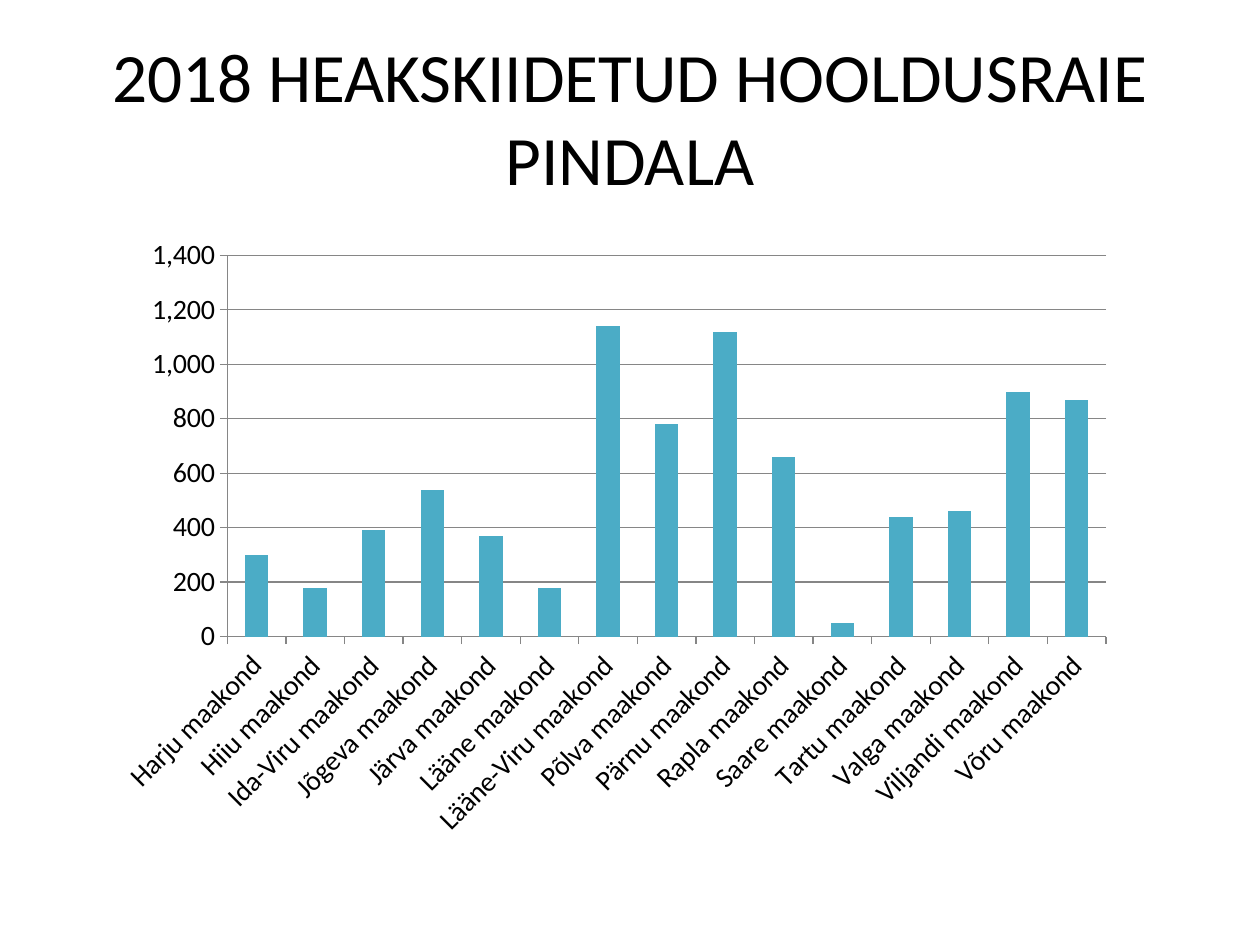
from lxml import etree
from pptx import Presentation
from pptx.chart.data import CategoryChartData
from pptx.dml.color import RGBColor
from pptx.enum.chart import XL_CHART_TYPE, XL_TICK_MARK
from pptx.enum.text import MSO_ANCHOR, PP_ALIGN
from pptx.oxml.ns import qn
from pptx.util import Cm, Pt

# Content
TITLE = "2018 HEAKSKIIDETUD HOOLDUSRAIE PINDALA"
AREA_BY_COUNTY = {
    "Harju": 300, "Hiiu": 180, "Ida-Viru": 390, "Jõgeva": 540, "Järva": 370,
    "Lääne": 180, "Lääne-Viru": 1140, "Põlva": 780, "Pärnu": 1120,
    "Rapla": 660, "Saare": 50, "Tartu": 440, "Valga": 460,
    "Viljandi": 900, "Võru": 870,
}

# Format
BLACK, GREY, TEAL = "000000", "868686", "4BACC6"
TITLE_BOX = (1.27, 0.76, 22.86, 3.18)
CHART_BOX = (2.11, 4.52, 20.6, 12.6)
PLOT_LAYOUT = {"layoutTarget": "inner", "xMode": "edge", "yMode": "edge",
               "x": 0.12, "y": 0.05, "w": 0.86, "h": 0.61}
TITLE_FONT = {"name": "Calibri", "size": Pt(39.6)}
AXIS_FONT = {"name": "Calibri", "size": Pt(16)}
VALUE_SCALE = {"minimum_scale": 0, "maximum_scale": 1400, "major_unit": 200,
               "has_major_gridlines": True}


def color(hex_value):
    return RGBColor.from_string(hex_value)


def set_attributes(target, values):
    for name, value in values.items():
        setattr(target, name, value)


def set_font(font, values):
    set_attributes(font, values)
    font.color.rgb = color(BLACK)


def set_line(line):
    line.color.rgb = color(GREY)
    line.width = Pt(0.75)


def add_title(slide):
    shape = slide.shapes.add_textbox(*map(Cm, TITLE_BOX))
    set_attributes(shape.text_frame, {"word_wrap": True,
                                      "vertical_anchor": MSO_ANCHOR.MIDDLE})
    paragraph = shape.text_frame.paragraphs[0]
    paragraph.text = TITLE
    paragraph.alignment = PP_ALIGN.CENTER
    set_font(paragraph.font, TITLE_FONT)


def set_plot_layout(chart):
    plot_area = chart.plots[0]._element.getparent()
    for old_layout in plot_area.findall(qn("c:layout")):
        plot_area.remove(old_layout)
    layout = etree.Element(qn("c:layout"))
    manual = etree.SubElement(layout, qn("c:manualLayout"))
    for name, value in PLOT_LAYOUT.items():
        etree.SubElement(manual, qn(f"c:{name}")).set("val", str(value))
    plot_area.insert(0, layout)


def add_chart(slide):
    data = CategoryChartData(number_format="#,##0")
    data.categories = [f"{county} maakond" for county in AREA_BY_COUNTY]
    data.add_series("Series 1", list(AREA_BY_COUNTY.values()))
    chart = slide.shapes.add_chart(
        XL_CHART_TYPE.COLUMN_CLUSTERED, *map(Cm, CHART_BOX), data).chart
    set_attributes(chart, {"has_legend": False, "has_title": False})
    set_font(chart.font, {"name": "Calibri", "size": Pt(10)})

    # Columns
    plot = chart.plots[0]
    set_attributes(plot, {"gap_width": 150, "vary_by_categories": False})
    fill = plot.series[0].format.fill
    fill.solid()
    fill.fore_color.rgb = color(TEAL)

    # Axes, with slanted county names
    for axis in (chart.category_axis, chart.value_axis):
        axis.major_tick_mark = XL_TICK_MARK.OUTSIDE
        axis.minor_tick_mark = XL_TICK_MARK.NONE
        set_font(axis.tick_labels.font, AXIS_FONT)
        set_line(axis.format.line)
    set_attributes(chart.value_axis, VALUE_SCALE)
    set_attributes(chart.value_axis.tick_labels,
                   {"number_format": "#,##0", "number_format_is_linked": False})
    set_line(chart.value_axis.major_gridlines.format.line)
    label_body = chart.category_axis._element.find(
        f"{qn('c:txPr')}/{qn('a:bodyPr')}")
    label_body.set("rot", str(-45 * 60000))
    label_body.set("vert", "horz")
    set_plot_layout(chart)


def main():
    presentation = Presentation()
    set_attributes(presentation, {"slide_width": Cm(25.4),
                                  "slide_height": Cm(19.05)})
    slide = presentation.slides.add_slide(presentation.slide_layouts[6])
    add_title(slide)
    add_chart(slide)
    presentation.save("out.pptx")


if __name__ == "__main__":
    main()
